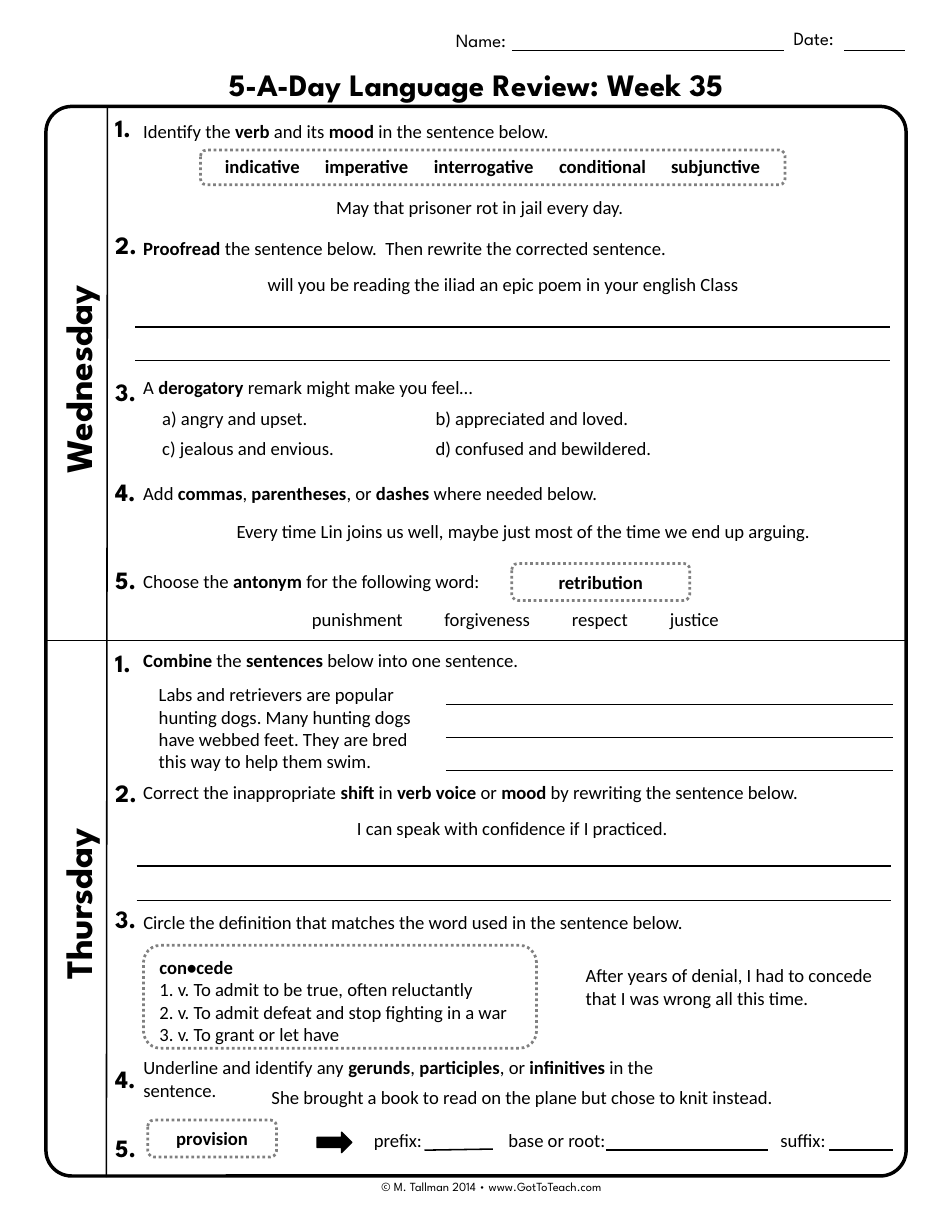
"""Build a one-page language review sheet for Wednesday and Thursday."""
import dataclasses
import typing

import lxml.etree
import pptx
import pptx.dml.color
import pptx.enum.dml
import pptx.enum.shapes
import pptx.enum.text
import pptx.oxml.ns
import pptx.util

Pt = pptx.util.Pt
FORM = pptx.enum.shapes.MSO_SHAPE
LEFT = pptx.enum.text.PP_ALIGN.LEFT
MID = pptx.enum.text.PP_ALIGN.CENTER
TOP = pptx.enum.text.MSO_ANCHOR.TOP
BASE = pptx.enum.text.MSO_ANCHOR.BOTTOM
GROW = pptx.enum.text.MSO_AUTO_SIZE.SHAPE_TO_FIT_TEXT
BLACK, GRAY, WHITE = "000000", "808080", "FFFFFF"
BODY = {"name": "Calibri", "size": Pt(12)}
LABEL = {"name": "League Spartan", "size": Pt(12)}
TITLE = {**LABEL, "size": Pt(20), "bold": True}
MARK = {**LABEL, "size": Pt(16), "bold": True}
DAY = {**LABEL, "size": Pt(24), "bold": True}
FOOT = {**LABEL, "size": Pt(8)}


@dataclasses.dataclass
class Note:
    text: str
    x: float
    y: float
    w: float
    h: float = 21.6
    font: dict = dataclasses.field(default_factory=lambda: BODY)
    align: typing.Any = LEFT
    turn: float = 0
    tabs: tuple = ()


@dataclasses.dataclass
class Box:
    text: str
    x: float
    y: float
    w: float
    h: float
    align: typing.Any = MID
    anchor: typing.Any = BASE
    inset: float = 7.2
    tabs: tuple = ()


@dataclasses.dataclass
class Rule:
    x: float
    y: float
    end: float
    low: typing.Optional[float] = None


def tint(code: str) -> pptx.dml.color.RGBColor:
    return pptx.dml.color.RGBColor.from_string(code)


def apply(part: typing.Any, look: dict) -> None:
    for key, value in look.items():
        setattr(part, key, value)


def write(frame: typing.Any, text: str, font: dict, align: typing.Any, tabs: tuple) -> None:
    for row, line in enumerate(text.split("\n")):
        para = frame.add_paragraph() if row else frame.paragraphs[0]
        para.alignment = align
        if tabs:
            stops = lxml.etree.SubElement(para._p.get_or_add_pPr(), pptx.oxml.ns.qn("a:tabLst"))
            for stop in tabs:
                lxml.etree.SubElement(stops, pptx.oxml.ns.qn("a:tab"), pos=str(Pt(stop)), algn="l")
        for turn, piece in enumerate(line.split("*")):
            if piece:
                run = para.add_run()
                run.text = piece
                apply(run.font, {"bold": turn % 2 == 1, **font})
                run.font.color.rgb = tint(BLACK)


def add_note(slide: typing.Any, note: Note) -> None:
    shape = slide.shapes.add_textbox(Pt(note.x), Pt(note.y), Pt(note.w), Pt(note.h))
    shape.rotation = note.turn
    apply(shape.text_frame, {"word_wrap": True, "auto_size": GROW})
    write(shape.text_frame, note.text, note.font, note.align, note.tabs)


def add_form(slide: typing.Any, kind: typing.Any, x: float, y: float, w: float, h: float,
             fill: typing.Optional[str], line: str, width: float) -> typing.Any:
    shape = slide.shapes.add_shape(kind, Pt(x), Pt(y), Pt(w), Pt(h))
    shape.shadow.inherit = False
    if fill:
        shape.fill.solid()
        shape.fill.fore_color.rgb = tint(fill)
    else:
        shape.fill.background()
    shape.line.color.rgb = tint(line)
    shape.line.width = Pt(width)
    return shape


def add_box(slide: typing.Any, box: Box) -> None:
    shape = add_form(slide, FORM.ROUNDED_RECTANGLE, box.x, box.y, box.w, box.h, WHITE, GRAY, 1.75)
    shape.line.dash_style = pptx.enum.dml.MSO_LINE.ROUND_DOT
    apply(shape.text_frame, {"word_wrap": True, "vertical_anchor": box.anchor,
                             "margin_left": Pt(box.inset)})
    write(shape.text_frame, box.text, BODY, box.align, box.tabs)


def add_rule(slide: typing.Any, rule: Rule) -> None:
    low = rule.y if rule.low is None else rule.low
    kind = pptx.enum.shapes.MSO_CONNECTOR.STRAIGHT
    line = slide.shapes.add_connector(kind, Pt(rule.x), Pt(rule.y), Pt(rule.end), Pt(low))
    line.line.color.rgb = tint(BLACK)
    line.line.width = Pt(1)
    lxml.etree.SubElement(line._element.spPr, pptx.oxml.ns.qn("a:effectLst"))


MARKS = (69.1, 144, 238.3, 303.1, 359.3, 412.6, 496.1, 577.4, 680.4, 724.3)
ASKS = (
    ("Identify the *verb* and its *mood* in the sentence below.", 73.4, 485.3),
    ("*Proofread* the sentence below.  Then rewrite the corrected sentence.", 149, 485.3),
    ("A *derogatory* remark might make you feel…", 238.3, 485.3),
    ("Add *commas*, *parentheses*, or *dashes* where needed below.", 306, 485.3),
    ("Choose the *antonym* for the following word:", 362.9, 244),
    ("*Combine* the *sentences* below into one sentence.", 413.3, 485.3),
    ("Correct the inappropriate *shift* in *verb voice* or *mood* by rewriting the sentence below.",
     498.2, 485.3),
    ("Circle the definition that matches the word used in the sentence below.", 581.8, 390.2),
    ("Underline and identify any *gerunds*, *participles*, or *infinitives* in the sentence.",
     675.4, 390.2),
)
LINES = (
    ("May that prisoner rot in jail every day.", 83.5, 122.4, 450),
    ("will you be reading the iliad an epic poem in your english Class", 95, 172.1, 457.2),
    ("Every time Lin joins us well, maybe just most of the time we end up arguing.",
     110.2, 330.5, 452.9),
    ("I can speak with confidence if I practiced.", 103, 521.3, 452.9),
    ("She brought a book to read on the plane but chose to knit instead.", 109.4, 694.8, 452.9),
)
PICKS = ("a) angry and upset.", "b) appreciated and loved.",
         "c) jealous and envious.", "d) confused and bewildered.")
NOTES = [
    Note("© M. Tallman 2014 • www.GotToTeach.com", 147.6, 754.6, 337, 17.3, FOOT, MID),
    Note("Wednesday", -32.4, 230.4, 155.5, 27.4, DAY, MID, 270),
    Note("Thursday", -13, 563, 125.3, 36, DAY, MID, 270),
    Note("5-A-Day Language Review: Week 35", 110.2, 38.2, 391.7, 31.7, TITLE, MID),
    Note("Name:", 280.1, 15.1, 58.3, font=LABEL, align=MID),
    Note("Date:", 493.9, 13.7, 58.3, font=LABEL, align=MID),
    *(Note(f"{i % 5 + 1}.", 67, y, 31, 26.6, MARK) for i, y in enumerate(MARKS)),
    *(Note(text, 85, y, w) for text, y, w in ASKS),
    *(Note(text, x, y, w, align=MID) for text, x, y, w in LINES),
    *(Note(text, 97.2 + i % 2 * 175.7, 257.8 + i // 2 * 19.4, 170) for i, text in enumerate(PICKS)),
    Note("punishment\tforgiveness\trespect\tjustice", 193.4, 387.4, 279.4,
         tabs=(85.2, 167.1, 230.1)),
    Note("Labs and retrievers are popular hunting dogs. Many hunting dogs have webbed feet. "
         "They are bred this way to help them swim.", 95, 435.6, 177.8, 65.5),
    Note("After years of denial, I had to concede that I was wrong all this time.",
         369.4, 616.3, 200.2, 36),
    Note("prefix:", 233.3, 722.2, 45.4),
    Note("base or root:", 319.7, 722.2, 91.4),
    Note("suffix:", 494.6, 722.2, 47.5),
]
BOXES = (
    Box("*indicative\timperative\tinterrogative\tconditional\tsubjunctive*", 128.9, 96.5, 375.8,
        22.3, LEFT, inset=14.6, tabs=(64.3, 134.4, 214.8, 286.8)),
    Box("*retribution*", 329, 362.2, 114.5, 23.8),
    Box("*con•cede*\n1. v. To admit to be true, often reluctantly\n"
        "2. v. To admit defeat and stop fighting in a war\n3. v. To grant or let have",
        92.2, 607.7, 252.7, 66.2, LEFT, TOP),
    Box("*provision*", 95, 720, 82.8, 23.8),
)
RULES = [
    Rule(29.5, 411.8, 581.8),
    Rule(69.1, 68.4, 68.4, 756.7),
    Rule(329, 32.4, 504),
    Rule(542.9, 32.4, 581.8),
    *(Rule(87.1, y, 572.4) for y in (210.2, 231.8)),
    *(Rule(286.6, 452.9 + i * 21.25, 573.8) for i in range(3)),
    *(Rule(87.8, y, 573.1) for y in (556.6, 578.9)),
    Rule(272.9, 739.4, 316.8, 738.7),
    Rule(389.5, 739.4, 493.9),
    Rule(532.8, 739.4, 573.8),
]


def main() -> None:
    deck = pptx.Presentation()
    apply(deck, {"slide_width": Pt(612), "slide_height": Pt(792)})
    slide = deck.slides.add_slide(deck.slide_layouts[6])
    frame = add_form(slide, FORM.ROUNDED_RECTANGLE, 29.5, 68.4, 553, 687.6, None, BLACK, 2.25)
    frame.adjustments[0] = 0.03
    for rule in RULES:
        add_rule(slide, rule)
    for note in NOTES:
        add_note(slide, note)
    add_form(slide, FORM.RIGHT_ARROW, 203.8, 727.9, 22.3, 13, BLACK, BLACK, 1)
    for box in BOXES:
        add_box(slide, box)
    deck.save("out.pptx")


if __name__ == "__main__":
    main()
